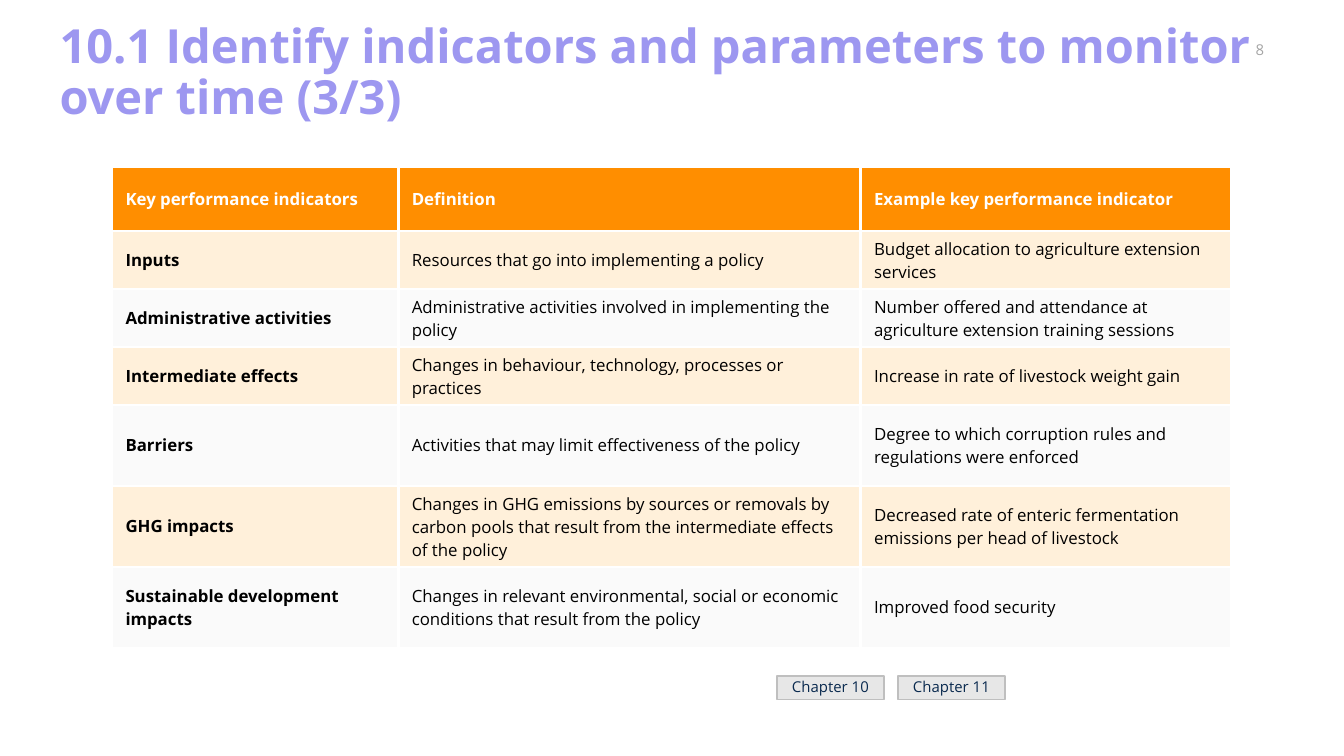
from lxml.etree import SubElement
from pptx import Presentation
from pptx.dml.color import RGBColor
from pptx.enum.shapes import MSO_SHAPE
from pptx.enum.text import MSO_ANCHOR, MSO_AUTO_SIZE, PP_ALIGN
from pptx.oxml.ns import qn
from pptx.util import Inches, Pt

SLIDE_WIDTH = Inches(10)
SLIDE_HEIGHT = SLIDE_WIDTH * 9 // 16
FONT = "Open Sans"
WHITE, BLACK = "FFFFFF", "000000"
HEADER_FILL, BAND_FILLS = "FF8E00", ("FFF0DA", "FAFAFA")
COLUMN_SHARES = (21.3, 34.4, 27.6)
ROW_SHARES = (8.53,) + (7.67,) * 3 + (10.72,) * 3
INDICATORS = (
    ("Key performance indicators", "Definition", "Example key performance indicator"),
    ("Inputs", "Resources that go into implementing a policy",
     "Budget allocation to agriculture extension services"),
    ("Administrative activities",
     "Administrative activities involved in implementing the policy",
     "Number offered and attendance at agriculture extension training sessions"),
    ("Intermediate effects", "Changes in behaviour, technology, processes or practices",
     "Increase in rate of livestock weight gain"),
    ("Barriers", "Activities that may limit effectiveness of the policy",
     "Degree to which corruption rules and regulations were enforced"),
    ("GHG impacts",
     "Changes in GHG emissions by sources or removals by carbon pools that result "
     "from the intermediate effects of the policy",
     "Decreased rate of enteric fermentation emissions per head of livestock"),
    ("Sustainable development impacts",
     "Changes in relevant environmental, social or economic conditions that result "
     "from the policy",
     "Improved food security"),
)


def across(share):
    """Turn a percentage of the slide width into a length."""
    return int(SLIDE_WIDTH * share / 100)


def down(share):
    """Turn a percentage of the slide height into a length."""
    return int(SLIDE_HEIGHT * share / 100)


def area(left, top, width, height):
    """Turn percentages of the slide into a position and a size."""
    return across(left), down(top), across(width), down(height)


def color(hex_value):
    """Turn a hex string into a colour."""
    return RGBColor.from_string(hex_value)


def write(frame, text, size, hex_value, bold=False, align=PP_ALIGN.LEFT, spacing=None):
    """Fill a text frame with one formatted paragraph."""
    frame.word_wrap = True
    frame.vertical_anchor = MSO_ANCHOR.MIDDLE
    paragraph = frame.paragraphs[0]
    paragraph.text = text
    paragraph.alignment = align
    paragraph.line_spacing = spacing
    font = paragraph.font
    font.name, font.size, font.bold = FONT, Pt(size), bold
    font.color.rgb = color(hex_value)


def add_title(slide, text):
    """Place the heading in the title placeholder."""
    title = slide.shapes.title
    title.left, title.top, title.width, title.height = area(3.43, 4.2, 93.2, 11.2)
    title.text_frame.auto_size = MSO_AUTO_SIZE.NONE
    write(title.text_frame, text, 25.2, "9D97F0", bold=True, spacing=0.9)


def add_page_number(slide, number):
    """Place the page number in the top right corner."""
    frame = slide.shapes.add_textbox(*area(89.8, 4.65, 7.9, 3.91)).text_frame
    frame.margin_left = frame.margin_right = frame.margin_top = frame.margin_bottom = 0
    write(frame, number, 8, "A5A5A5", align=PP_ALIGN.CENTER)


def add_borders(cell, hex_value, width):
    """Draw a solid line on each side of a table cell."""
    properties = cell._tc.get_or_add_tcPr()
    for side in ("lnL", "lnR", "lnT", "lnB"):
        line = SubElement(properties, qn(f"a:{side}"), w=str(Pt(width)))
        SubElement(SubElement(line, qn("a:solidFill")), qn("a:srgbClr"), val=hex_value)


def add_indicator_table(slide):
    """Build the banded table of key performance indicators."""
    table = slide.shapes.add_table(
        len(ROW_SHARES), len(COLUMN_SHARES),
        *area(8.34, 22.04, sum(COLUMN_SHARES), sum(ROW_SHARES))).table
    for column, share in zip(table.columns, COLUMN_SHARES):
        column.width = across(share)
    for row_index, (row, share, texts) in enumerate(zip(table.rows, ROW_SHARES, INDICATORS)):
        row.height = down(share)
        is_header = row_index == 0
        row_fill = HEADER_FILL if is_header else BAND_FILLS[(row_index - 1) % 2]
        for column_index, (cell, text) in enumerate(zip(row.cells, texts)):
            add_borders(cell, WHITE, 1.5)
            cell.fill.solid()
            cell.fill.fore_color.rgb = color(row_fill)
            cell.vertical_anchor = MSO_ANCHOR.MIDDLE
            write(cell.text_frame, text, 9, WHITE if is_header else BLACK,
                  bold=is_header or column_index == 0)


def add_chapter_tag(slide, left, text):
    """Add a small grey chapter label."""
    tag = slide.shapes.add_shape(MSO_SHAPE.RECTANGLE, *area(left, 89.47, 8, 3.07))
    tag.shadow.inherit = False
    tag.fill.solid()
    tag.fill.fore_color.rgb = color("E7E7E7")
    tag.line.color.rgb = color("BFBFBF")
    tag.line.width = Pt(1)
    write(tag.text_frame, text, 8, "09294E", align=PP_ALIGN.CENTER, spacing=0.9)


def main():
    """Build and save the slide."""
    deck = Presentation()
    deck.slide_width, deck.slide_height = SLIDE_WIDTH, SLIDE_HEIGHT
    slide = deck.slides.add_slide(deck.slide_layouts[5])
    add_page_number(slide, "8")
    add_title(slide, "10.1 Identify indicators and parameters to monitor over time (3/3)")
    add_indicator_table(slide)
    for position, chapter in enumerate(("Chapter 10", "Chapter 11")):
        add_chapter_tag(slide, 57.8 + 9 * position, chapter)
    deck.save("out.pptx")


if __name__ == "__main__":
    main()
